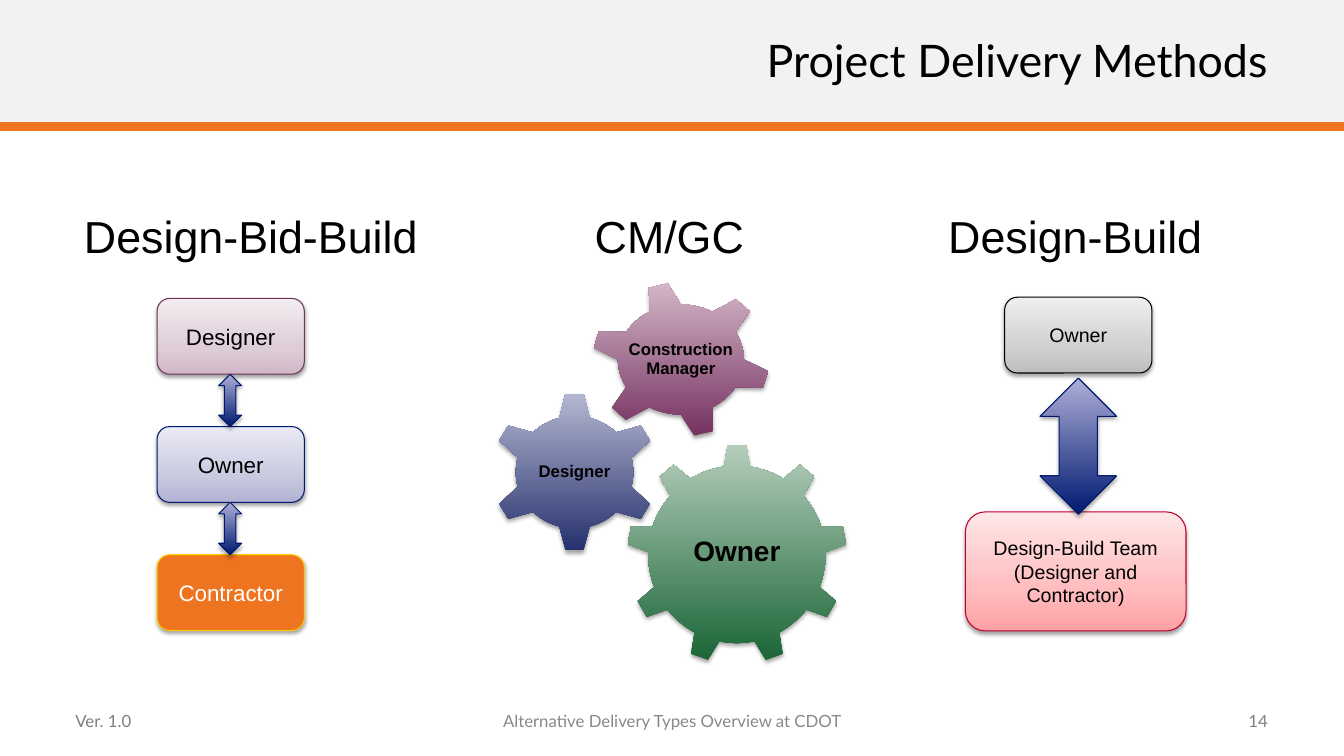
from dataclasses import dataclass
from math import cos, radians, sin

from lxml import etree
from pptx import Presentation
from pptx.dml.color import RGBColor
from pptx.enum.shapes import MSO_CONNECTOR, MSO_SHAPE
from pptx.enum.text import MSO_ANCHOR, PP_ALIGN
from pptx.oxml.ns import qn
from pptx.util import Cm, Pt

RECTANGLE = MSO_SHAPE.RECTANGLE
ROUNDED = MSO_SHAPE.ROUNDED_RECTANGLE
DOUBLE_ARROW = MSO_SHAPE.UP_DOWN_ARROW
STRAIGHT = MSO_CONNECTOR.STRAIGHT
MIDDLE = MSO_ANCHOR.MIDDLE
LEFT, CENTER, RIGHT = PP_ALIGN.LEFT, PP_ALIGN.CENTER, PP_ALIGN.RIGHT


@dataclass(frozen=True)
class Theme:
    # Fonts and type sizes
    body_font: str = "Arial"
    frame_font: str = "Lato"
    heading: int = 32
    gear_large: int = 20
    box_large: int = 16
    box_small: int = 14
    small: int = 12
    # Plain colours
    black: str = "000000"
    white: str = "FFFFFF"
    band: str = "F2F2F2"
    rule: str = "EF7521"
    footer: str = "7F7F7F"
    footer_center: str = "888888"
    orange: str = "EF7420"
    yellow: str = "F9CB00"
    navy: str = "00186E"
    plum: str = "6C375B"
    red: str = "BF002E"
    # Gradients, from bottom to top
    plum_fade: tuple = ((0, "D0B7C6"), (35, "DECDD7"), (100, "F3ECF0"))
    blue_fade: tuple = ((0, "B1B2D4"), (35, "C9CAE0"), (100, "EAEAF4"))
    grey_fade: tuple = ((0, "BDBDBD"), (35, "D1D1D1"), (100, "EEEEEE"))
    red_fade: tuple = ((0, "FFA1A5"), (35, "FFBDBF"), (100, "FFE6E7"))
    arrow_fade: tuple = ((0, "001970"), (100, "AEAFD7"))
    gear_green: tuple = ((0, "1B6637"), (100, "B5CDBB"))
    gear_blue: tuple = ((0, "26316E"), (100, "B4B7D0"))
    gear_plum: tuple = ((0, "753260"), (100, "D2B5C7"))


THEME = Theme()


def put_text(frame, text, size=THEME.small, color=THEME.black, font=THEME.body_font,
             bold=False, align=CENTER, spacing=None, wrap=True, margin=None):
    frame.word_wrap = wrap
    frame.vertical_anchor = MIDDLE
    if margin is not None:
        frame.margin_left = frame.margin_right = Cm(margin)
        frame.margin_top = frame.margin_bottom = Cm(margin)
    para = frame.paragraphs[0]
    para.alignment = align
    if spacing:
        para.line_spacing = spacing
    span = para.add_run()
    span.text = text
    span.font.name = font
    span.font.size = Pt(size)
    span.font.bold = bold
    span.font.color.rgb = RGBColor.from_string(color)


def add_label(page, area, text, **text_format):
    box = page.shapes.add_textbox(*map(Cm, area))
    put_text(box.text_frame, text, margin=0, **text_format)


def add_shadow(shape):
    shape.shadow.inherit = False
    effects = shape._element.spPr.find(qn("a:effectLst"))
    shadow = etree.SubElement(effects, qn("a:outerShdw"), blurRad=str(Pt(3.1)),
                              dist=str(Pt(1.8)), dir="5400000", rotWithShape="0")
    color = etree.SubElement(shadow, qn("a:srgbClr"), val=THEME.black)
    etree.SubElement(color, qn("a:alpha"), val="36000")


def paint(shape, fill, line=None):
    if isinstance(fill, str):
        shape.fill.solid()
        shape.fill.fore_color.rgb = RGBColor.from_string(fill)
    else:
        shape.fill.gradient()
        shape.fill.gradient_angle = 90
        stops = shape._element.spPr.find(qn("a:gradFill")).find(qn("a:gsLst"))
        for stop in list(stops):
            stops.remove(stop)
        for percent, color in fill:
            stop = etree.SubElement(stops, qn("a:gs"), pos=str(percent * 1000))
            etree.SubElement(stop, qn("a:srgbClr"), val=color)
    if line:
        shape.line.color.rgb = RGBColor.from_string(line)
        shape.line.width = Pt(0.75)
    else:
        shape.line.fill.background()


def add_box(page, area, text, fill, line, **text_format):
    box = page.shapes.add_shape(ROUNDED, *map(Cm, area))
    paint(box, fill, line)
    add_shadow(box)
    put_text(box.text_frame, text, **text_format)


def add_double_arrow(page, area):
    arrow = page.shapes.add_shape(DOUBLE_ARROW, *map(Cm, area))
    paint(arrow, THEME.arrow_fade, THEME.navy)
    add_shadow(arrow)


def add_gear(page, center, radii, text, fill, size=THEME.small, teeth=6, turn=0,
             root=0.715, tip_angle=6.35, root_angle=15):
    """Teeth spread evenly round an ellipse; angles run clockwise from the top."""
    def point(angle, ratio):
        x = center[0] + radii[0] * ratio * sin(radians(angle))
        y = center[1] - radii[1] * ratio * cos(radians(angle))
        return Cm(x), Cm(y)

    pitch = 360 / teeth
    arc_steps = 8
    outline = []
    for tooth in range(teeth):
        middle = turn + tooth * pitch
        outline += [point(middle - tip_angle, 1), point(middle + tip_angle, 1)]
        arc = pitch - 2 * root_angle
        outline += [point(middle + root_angle + arc * step / arc_steps, root)
                    for step in range(arc_steps + 1)]
    builder = page.shapes.build_freeform(*outline[0])
    builder.add_line_segments(outline[1:], close=True)
    gear = builder.convert_to_shape()
    paint(gear, fill)
    add_shadow(gear)
    put_text(gear.text_frame, text, size=size, bold=True, spacing=0.9, margin=0.76)


def add_frame(page, width):
    # Header band, rule and title
    band = page.shapes.add_shape(RECTANGLE, 0, 0, width, Cm(3.18))
    paint(band, THEME.band)
    band.shadow.inherit = False
    rule = page.shapes.add_connector(STRAIGHT, 0, Cm(3.18), width, Cm(3.18))
    rule.line.color.rgb = RGBColor.from_string(THEME.rule)
    rule.line.width = Pt(6.5)
    etree.SubElement(rule._element.spPr, qn("a:effectLst"))
    add_label(page, (7.67, 0, 24.28, 3.18), "Project Delivery Methods", size=THEME.heading,
              font=THEME.frame_font, align=RIGHT, spacing=0.9)
    # Footer
    for left, width, text, color, align in (
            (1.9, 7.62, "Ver. 1.0", THEME.footer, LEFT),
            (11.23, 11.43, "Alternative Delivery Types Overview at CDOT",
             THEME.footer_center, CENTER),
            (24.33, 7.62, "14", THEME.footer, RIGHT)):
        add_label(page, (left, 17.65, width, 1.02), text, color=color,
                  font=THEME.frame_font, align=align)


def main():
    deck = Presentation()
    deck.slide_width, deck.slide_height = Cm(33.87), Cm(19.05)
    page = deck.slides.add_slide(deck.slide_layouts[6])
    add_frame(page, deck.slide_width)

    # Column headings
    for left, width, text in ((0.76, 11.13, "Design-Bid-Build"), (14.71, 4.32, "CM/GC"),
                              (23.62, 6.96, "Design-Build")):
        add_label(page, (left, 5.13, width, 1.63), text, size=THEME.heading, wrap=False)

    # Design-Bid-Build: a chain of three parties
    box_width, box_height, top, step = 3.71, 1.91, 7.52, 3.23
    parties = (("Designer", THEME.plum_fade, THEME.plum, THEME.black),
               ("Owner", THEME.blue_fade, THEME.navy, THEME.black),
               ("Contractor", THEME.orange, THEME.yellow, THEME.white))
    for index, (text, fill, line, color) in enumerate(parties):
        box_top = top + index * step
        add_box(page, (3.96, box_top, box_width, box_height), text, fill, line,
                size=THEME.box_large, color=color)
        if index:
            gap = step - box_height
            add_double_arrow(page, (5.51, box_top - gap, 0.58, gap))

    # CM/GC: three meshing gears
    add_gear(page, (18.57, 13.97), (2.76, 2.76), "Owner", THEME.gear_green,
             size=THEME.gear_large, teeth=9, root=0.81, tip_angle=4.74, root_angle=8.5)
    add_gear(page, (14.48, 11.9), (2.07, 1.98), "Designer", THEME.gear_blue)
    add_gear(page, (17.16, 9.06), (2.22, 1.94), "Construction Manager", THEME.gear_plum,
             turn=-15)

    # Design-Build: owner and one joint team
    add_box(page, (25.32, 7.49, box_width, box_height), "Owner", THEME.grey_fade,
            THEME.black, size=THEME.box_small)
    add_box(page, (24.33, 12.9, 5.56, 3), "Design-Build Team (Designer and Contractor)",
            THEME.red_fade, THEME.red, size=THEME.box_small)
    add_double_arrow(page, (26.21, 9.53, 1.93, 3.43))

    deck.save("out.pptx")


if __name__ == "__main__":
    main()
